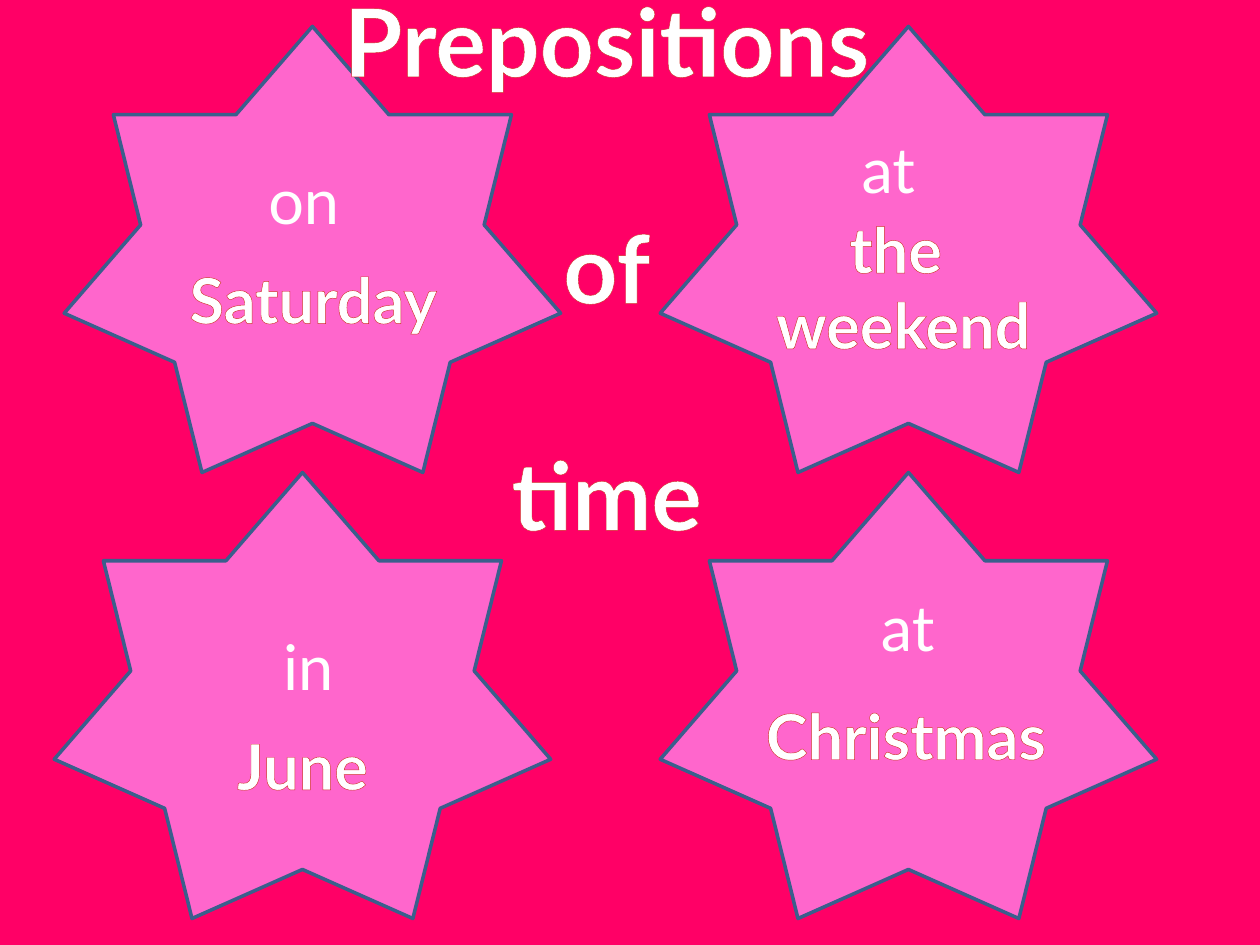
from lxml import etree
from pptx import Presentation
from pptx.dml.color import RGBColor
from pptx.enum.shapes import MSO_SHAPE
from pptx.enum.text import MSO_ANCHOR, MSO_AUTO_SIZE, PP_ALIGN
from pptx.oxml.ns import qn
from pptx.util import Pt

STAR = MSO_SHAPE.STAR_7_POINT
TOP = MSO_ANCHOR.TOP
FIXED = MSO_AUTO_SIZE.NONE
CENTER = PP_ALIGN.CENTER

TITLE_ONLY = 5
FONT = "Lato"
WHITE = "FFFFFF"
STAR_SIZE = (283.7, 254.9)
STAR_CORNERS = [(36.7, 15.1), (31, 270), (377.3, 270), (377.3, 15.1)]
PREPOSITIONS = [
    ("on ", 121.7, 88.6, 113),
    ("at", 450.7, 71.3, 113.8),
    ("in", 99.4, 355, 153.4),
    ("at", 462.2, 332.6, 113),
]
TIMES = [
    (["Saturday"], 76.3, 145.4, 205.2),
    (["June"], 115.9, 411.8, 113.8),
    (["Christmas"], 405.4, 394.6, 224.6),
    (["the ", "weekend"], 422.6, 116.6, 187.2),
]


def color(hex_value):
    return RGBColor.from_string(hex_value)


def outline_text(run):
    properties = run.font._element if hasattr(run.font, "_element") else run._r.get_or_add_rPr()
    line = etree.Element(qn("a:ln"), w=str(Pt(1.93)))
    fill = etree.SubElement(line, qn("a:solidFill"))
    etree.SubElement(fill, qn("a:srgbClr"), val="D02F2A")
    properties.insert(0, line)


def write_lines(frame, lines, size, bold, gap=0):
    frame.auto_size = FIXED
    frame.vertical_anchor = TOP
    for index, line in enumerate(lines):
        paragraph = frame.paragraphs[0] if index == 0 else frame.add_paragraph()
        paragraph.alignment = CENTER
        paragraph.space_before = Pt(gap if index else 0)
        font = paragraph.font
        font.name, font.size, font.bold = FONT, Pt(size), bold
        font.color.rgb = color(WHITE)
        run = paragraph.add_run()
        run.text = line
        if bold:
            outline_text(run)


def add_star(slide, left, top):
    star = slide.shapes.add_shape(STAR, Pt(left), Pt(top), *map(Pt, STAR_SIZE))
    star.shadow.inherit = False
    star.fill.solid()
    star.fill.fore_color.rgb = color("FF66CC")
    star.line.color.rgb = color("3A5F8C")
    star.line.width = Pt(2)


def add_title(slide, lines):
    title = slide.shapes.title
    title.left, title.top = Pt(142.6), Pt(-13.7)
    title.width, title.height = Pt(408.2), Pt(334.1)
    title.text_frame.word_wrap = False
    write_lines(title.text_frame, lines, 54, True, gap=64.8)
    title.element.getparent().append(title.element)


def add_label(slide, lines, left, top, width, bold):
    height = 7.2 + 43.2 * len(lines)
    label = slide.shapes.add_textbox(Pt(left), Pt(top), Pt(width), Pt(height))
    label.text_frame.word_wrap = not bold
    write_lines(label.text_frame, lines, 36, bold)


def main():
    deck = Presentation()
    deck.slide_width, deck.slide_height = Pt(720), Pt(540)
    slide = deck.slides.add_slide(deck.slide_layouts[TITLE_ONLY])
    slide.background.fill.solid()
    slide.background.fill.fore_color.rgb = color("FF0066")
    for left, top in STAR_CORNERS:
        add_star(slide, left, top)
    add_title(slide, ["Prepositions", "of", "time"])
    for lines, left, top, width in TIMES:
        add_label(slide, lines, left, top, width, bold=True)
    for word, left, top, width in PREPOSITIONS:
        add_label(slide, [word], left, top, width, bold=False)
    deck.save("out.pptx")


if __name__ == "__main__":
    main()
